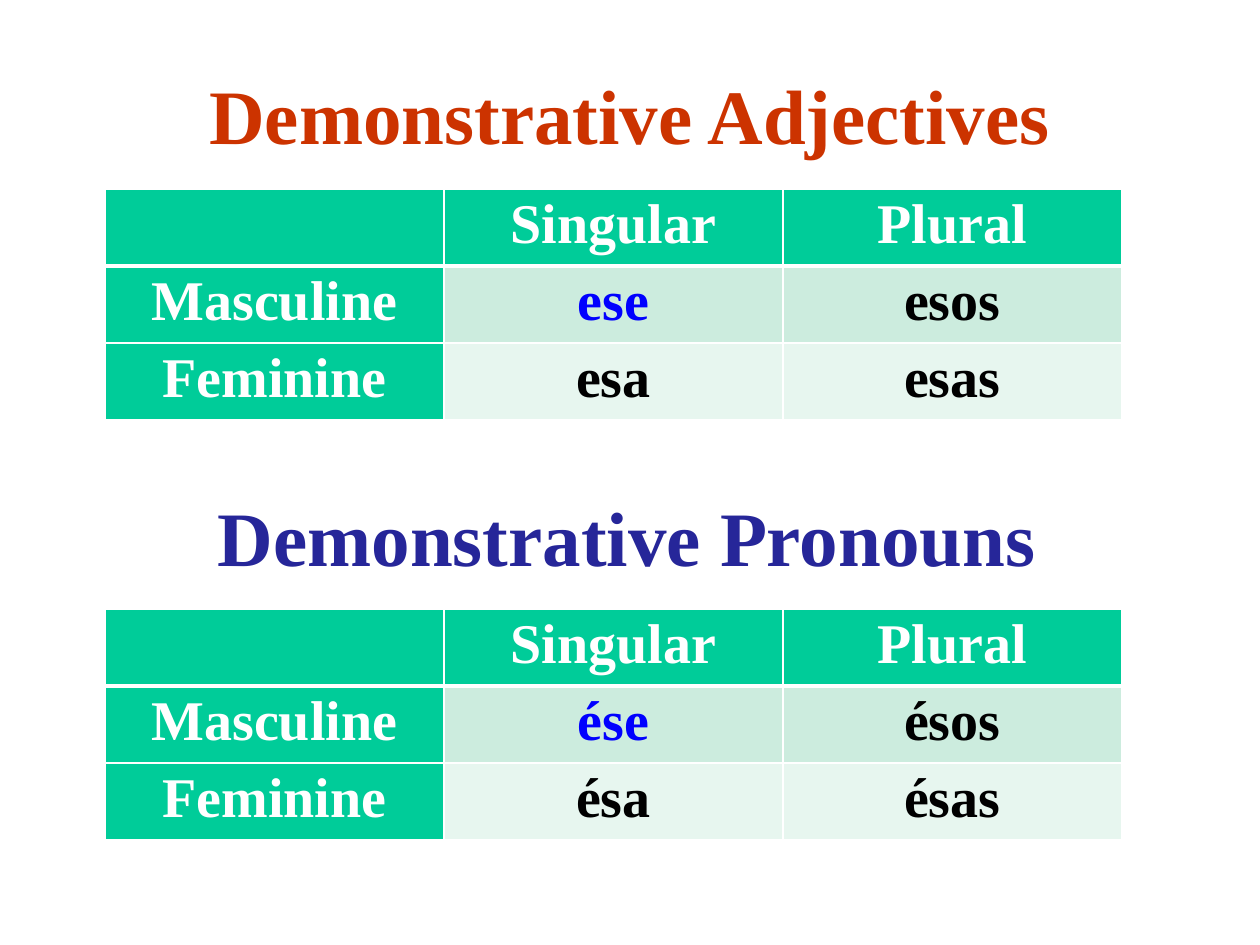
import lxml.etree
import pptx
import pptx.dml.color
import pptx.enum.text
import pptx.oxml.ns
import pptx.util

SCALE = 914400 / 126
GREEN, MINT, PALE = "00CC99", "CCECDE", "E7F6EF"
WHITE, BLACK, BLUE = "FFFFFF", "000000", "0000FF"


def emu(px):
    return pptx.util.Emu(round(px * SCALE))


def color(value):
    return pptx.dml.color.RGBColor.from_string(value)


class SlideBuilder:
    """Holds the text style and the current slide, and adds its elements."""

    def __init__(self, slide, font):
        self.slide = slide
        self.font = font

    def add_text(self, para, text, size, fill):
        para.alignment = pptx.enum.text.PP_ALIGN.CENTER
        span = para.add_run()
        span.text = text
        span.font.name = self.font
        span.font.size = pptx.util.Pt(size)
        span.font.bold = True
        span.font.color.rgb = color(fill)

    def heading(self, left, top, text, fill):
        box = self.slide.shapes.add_textbox(emu(left), emu(top), emu(1086), emu(128))
        frame = box.text_frame
        frame.word_wrap = True
        frame.vertical_anchor = pptx.enum.text.MSO_ANCHOR.MIDDLE
        self.add_text(frame.paragraphs[0], text, 44, fill)

    def border(self, cell, side, points):
        properties = cell._tc.get_or_add_tcPr()
        tag = pptx.oxml.ns.qn
        line = lxml.etree.SubElement(properties, tag(f"a:ln{side}"), w=str(pptx.util.Pt(points)))
        fill = lxml.etree.SubElement(line, tag("a:solidFill"))
        lxml.etree.SubElement(fill, tag("a:srgbClr"), val=WHITE)

    def cell(self, cell, text, fill, ink, top_width, bottom_width):
        for side, points in (("L", 1), ("R", 1), ("T", top_width), ("B", bottom_width)):
            self.border(cell, side, points)
        cell.fill.solid()
        cell.fill.fore_color.rgb = color(fill)
        cell.margin_left = cell.margin_right = emu(9)
        cell.margin_top = cell.margin_bottom = 0
        if text:
            para = cell.text_frame.paragraphs[0]
            para.line_spacing = 1.07
            para.space_before = para.space_after = pptx.util.Pt(6)
            self.add_text(para, text, 32, ink)

    def table(self, left, top, rows):
        frame = self.slide.shapes.add_table(3, 3, emu(left), emu(top), emu(1017), emu(231))
        for column in frame.table.columns:
            column.width = emu(339)
        for row_index, row in enumerate(rows):
            frame.table.rows[row_index].height = emu(77)
            for column_index, text in enumerate(row):
                is_label = row_index == 0 or column_index == 0
                fill = GREEN if is_label else (MINT, PALE)[row_index - 1]
                is_highlight = row_index == column_index == 1
                ink = WHITE if is_label else BLUE if is_highlight else BLACK
                self.cell(
                    frame.table.cell(row_index, column_index), text, fill, ink,
                    top_width=3 if row_index == 1 else 1,
                    bottom_width=3 if row_index == 0 else 1,
                )


def main():
    deck = pptx.Presentation()
    deck.slide_width, deck.slide_height = emu(1260), emu(945)
    page = SlideBuilder(deck.slides.add_slide(deck.slide_layouts[6]), "Times New Roman")
    sections = (
        (87, 50, "Demonstrative Adjectives", "CC3300", 189, ("ese", "esos"), ("esa", "esas")),
        (84, 472, "Demonstrative Pronouns", "262699", 609, ("ése", "ésos"), ("ésa", "ésas")),
    )
    for left, top, title, fill, table_top, masculine, feminine in sections:
        page.heading(left, top, title, fill)
        page.table(105, table_top, (
            ("", "Singular", "Plural"),
            ("Masculine", *masculine),
            ("Feminine", *feminine),
        ))
    deck.save("out.pptx")


if __name__ == "__main__":
    main()
